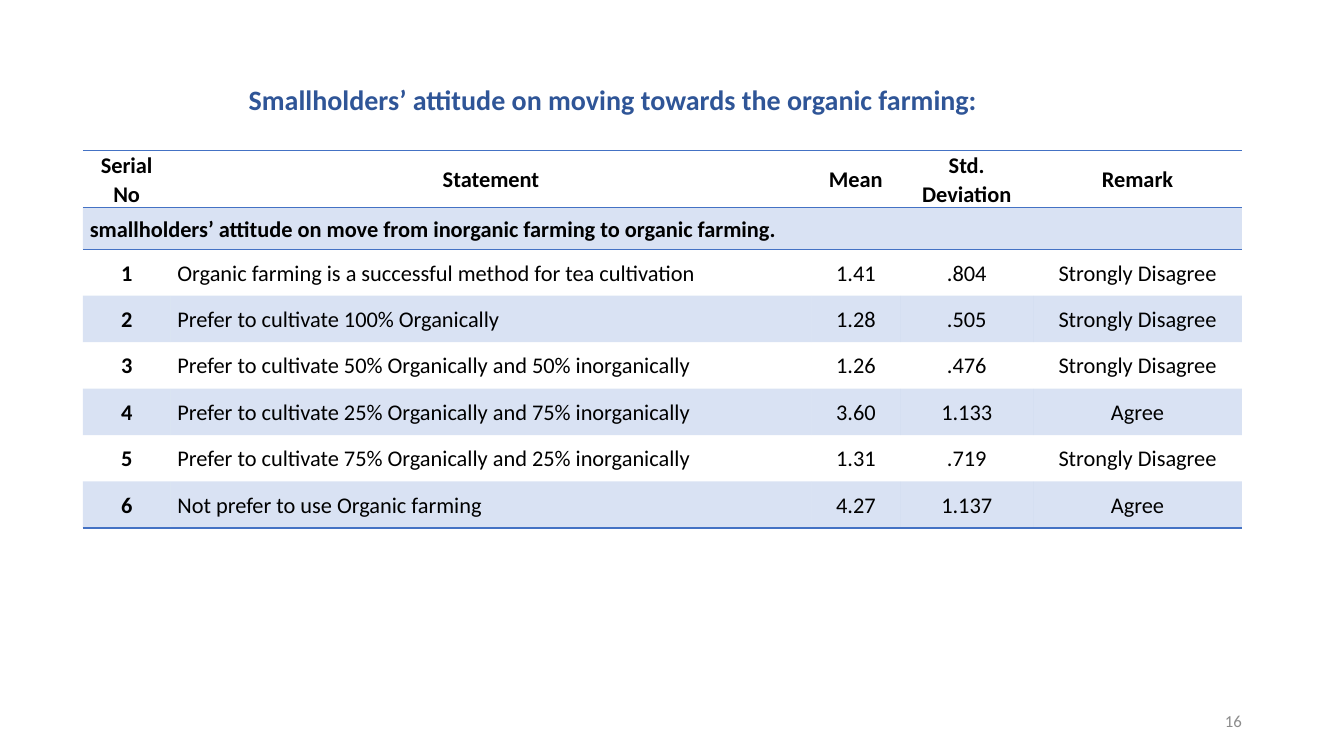
"""Build the slide on smallholders' attitude towards organic farming."""
from dataclasses import dataclass

from lxml.etree import SubElement
from pptx import Presentation
from pptx.dml.color import RGBColor
from pptx.enum.text import MSO_ANCHOR as ANCHOR, PP_ALIGN as ALIGN
from pptx.oxml.ns import qn
from pptx.slide import Slide
from pptx.table import _Cell as Cell
from pptx.text.text import TextFrame
from pptx.util import Pt

BLUE = RGBColor(0x44, 0x72, 0xC4)
TITLE_BLUE = RGBColor(0x2F, 0x55, 0x97)
GRAY = RGBColor(0x8C, 0x8C, 0x8C)
BLACK = RGBColor(0, 0, 0)
FONT = "Calibri"
NO_STYLE = "{2D5ABB26-0587-4C30-8999-92F81FD0307C}"
BAND_ALPHA = "20000"

COLUMN_WIDTHS = (62.6, 457.9, 63.4, 95, 149)
HEADER_HEIGHT, SECTION_HEIGHT, ROW_HEIGHT = 26.6, 29.5, 33.2
HEADERS = ("Serial No", "Statement", "Mean", "Std. Deviation", "Remark")
SECTION = "smallholders’ attitude on move from inorganic farming to organic farming."


@dataclass(frozen=True)
class Finding:
    statement: str
    mean: str
    deviation: str
    remark: str


@dataclass(frozen=True)
class Label:
    text: str
    box: tuple[float, float, float, float]
    size: float
    color: RGBColor
    bold: bool
    align: ALIGN
    spacing: float
    wrap: bool


FINDINGS = (
    Finding("Organic farming is a successful method for tea cultivation",
            "1.41", ".804", "Strongly Disagree"),
    Finding("Prefer to cultivate 100% Organically", "1.28", ".505", "Strongly Disagree"),
    Finding("Prefer to cultivate 50% Organically and 50% inorganically",
            "1.26", ".476", "Strongly Disagree"),
    Finding("Prefer to cultivate 25% Organically and 75% inorganically",
            "3.60", "1.133", "Agree"),
    Finding("Prefer to cultivate 75% Organically and 25% inorganically",
            "1.31", ".719", "Strongly Disagree"),
    Finding("Not prefer to use Organic farming", "4.27", "1.137", "Agree"),
)
LABELS = (
    Label("16", (678.2, 500.5, 216, 28.8), 12, GRAY, False, ALIGN.RIGHT, 1, True),
    Label("Smallholders’ attitude on moving towards the organic farming:",
          (170.6, 53.4, 604, 33), 20, TITLE_BLUE, True, ALIGN.LEFT, 1.07, True),
)


def write(tf: TextFrame, text: str, size: float, color: RGBColor, bold: bool,
          align: ALIGN, spacing: float) -> None:
    p = tf.paragraphs[0]
    p.alignment, p.line_spacing = align, spacing
    r = p.add_run()
    r.text = text
    for name, value in {"name": FONT, "size": Pt(size), "bold": bold}.items():
        setattr(r.font, name, value)
    r.font.color.rgb = color


def add_label(s: Slide, label: Label) -> None:
    tf = s.shapes.add_textbox(*map(Pt, label.box)).text_frame
    tf.word_wrap, tf.vertical_anchor = label.wrap, ANCHOR.MIDDLE
    write(tf, label.text, label.size, label.color, label.bold, label.align, label.spacing)


def add_border(cell: Cell, tag: str) -> None:
    ln = SubElement(cell._tc.get_or_add_tcPr(), qn(tag), w=str(Pt(1)))
    SubElement(SubElement(ln, qn("a:solidFill")), qn("a:srgbClr"), val=str(BLUE))


def fill_band(cell: Cell) -> None:
    cell.fill.solid()
    cell.fill.fore_color.rgb = BLUE
    color = cell._tc.tcPr.find(qn("a:solidFill")).find(qn("a:srgbClr"))
    SubElement(color, qn("a:alpha"), val=BAND_ALPHA)


def style_cell(cell: Cell, row: int, last: int) -> None:
    side = Pt(4.3 if row == 0 else 5)
    layout = {"margin_left": side, "margin_right": side, "margin_top": 0,
              "margin_bottom": 0, "vertical_anchor": ANCHOR.MIDDLE}
    for name, value in layout.items():
        setattr(cell, name, value)
    if row in (0, 1):
        add_border(cell, "a:lnT")
    if row in (0, last):
        add_border(cell, "a:lnB")
    if row % 2:
        fill_band(cell)
    else:
        cell.fill.background()


def add_findings_table(s: Slide) -> None:
    rows = [HEADERS, (SECTION,)]
    rows += [(str(n), f.statement, f.mean, f.deviation, f.remark)
             for n, f in enumerate(FINDINGS, 1)]
    heights = [HEADER_HEIGHT, SECTION_HEIGHT] + [ROW_HEIGHT] * len(FINDINGS)
    table = s.shapes.add_table(len(rows), len(HEADERS), Pt(59.2), Pt(107.4),
                               Pt(sum(COLUMN_WIDTHS)), Pt(sum(heights))).table
    table._tbl.tblPr.find(qn("a:tableStyleId")).text = NO_STYLE
    for column, width in zip(table.columns, COLUMN_WIDTHS):
        column.width = Pt(width)
    for i, (row, height) in enumerate(zip(rows, heights)):
        table.rows[i].height = Pt(height)
        for j in range(len(HEADERS)):
            style_cell(table.cell(i, j), i, len(rows) - 1)
        for j, text in enumerate(row):
            left = i == 1 or (i > 1 and j == 1)
            write(table.cell(i, j).text_frame, text, 16, BLACK, i < 2 or j == 0,
                  ALIGN.LEFT if left else ALIGN.CENTER, 1.07)
    table.cell(1, 0).merge(table.cell(1, len(HEADERS) - 1))


def main() -> None:
    prs = Presentation()
    prs.slide_width, prs.slide_height = Pt(960), Pt(540)
    s = prs.slides.add_slide(prs.slide_layouts[6])
    for label in LABELS:
        add_label(s, label)
    add_findings_table(s)
    prs.save("out.pptx")


if __name__ == "__main__":
    main()
